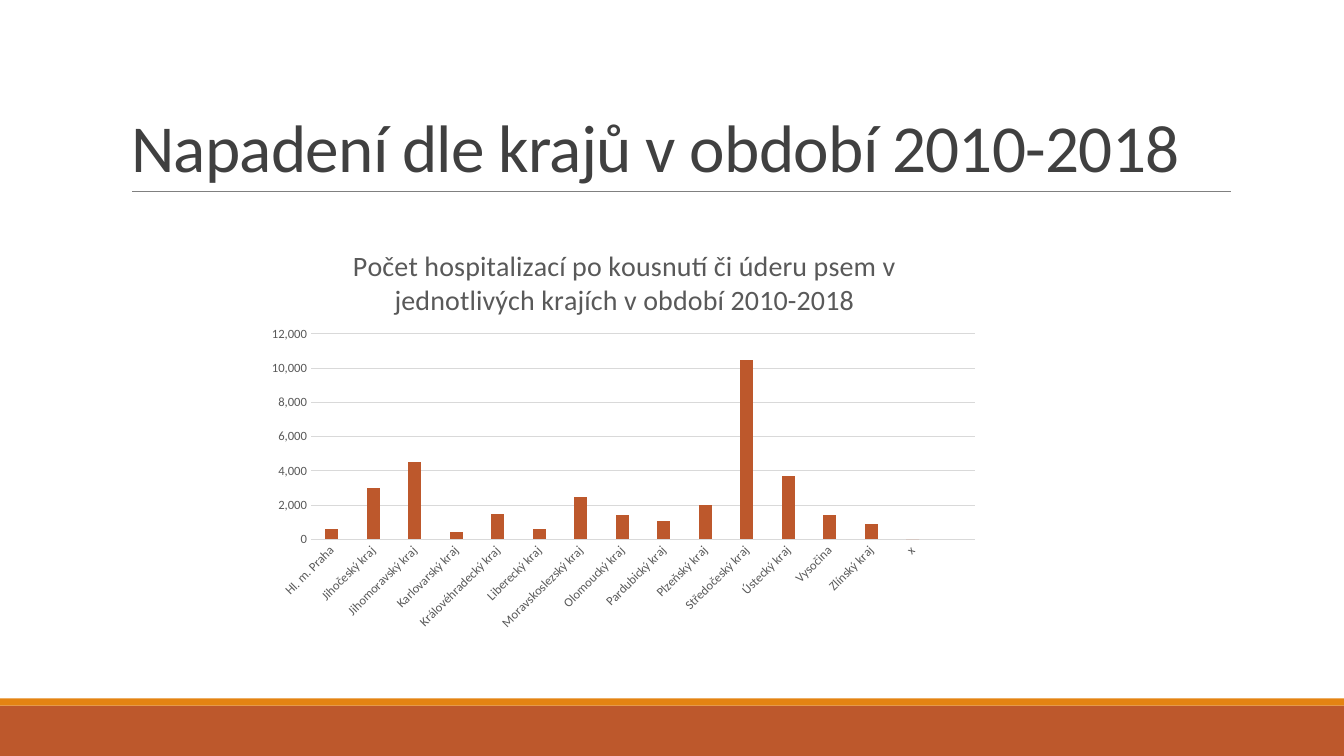
from lxml import etree
from pptx import Presentation
from pptx.chart.data import CategoryChartData
from pptx.dml.color import RGBColor
from pptx.enum.chart import XL_CHART_TYPE, XL_TICK_MARK
from pptx.enum.shapes import MSO_CONNECTOR, MSO_SHAPE
from pptx.enum.text import MSO_ANCHOR, MSO_AUTO_SIZE, PP_ALIGN
from pptx.oxml import parse_xml
from pptx.oxml.ns import nsdecls, qn
from pptx.util import Cm, Pt

COLUMNS = XL_CHART_TYPE.COLUMN_CLUSTERED
NO_TICK = XL_TICK_MARK.NONE
STRAIGHT = MSO_CONNECTOR.STRAIGHT
RECTANGLE = MSO_SHAPE.RECTANGLE
BOTTOM = MSO_ANCHOR.BOTTOM
NO_AUTOFIT = MSO_AUTO_SIZE.NONE
LEFT = PP_ALIGN.LEFT

FONT = "Calibri"
COLORS = {
    "rust": "BD582C",
    "orange": "E48312",
    "title": "404040",
    "rule": "808080",
    "label": "595959",
    "grid": "D9D9D9",
}
TITLE = "Napadení dle krajů v období 2010-2018"
CHART_TITLE = ("Počet hospitalizací po kousnutí či úderu psem v "
               "jednotlivých krajích v období 2010-2018")
HOSPITALIZATIONS = [
    ("Hl. m. Praha", 600),
    ("Jihočeský kraj", 3000),
    ("Jihomoravský kraj", 4500),
    ("Karlovarský kraj", 400),
    ("Královéhradecký kraj", 1500),
    ("Liberecký kraj", 600),
    ("Moravskoslezský kraj", 2500),
    ("Olomoucký kraj", 1400),
    ("Pardubický kraj", 1100),
    ("Plzeňský kraj", 2000),
    ("Středočeský kraj", 10500),
    ("Ústecký kraj", 3700),
    ("Vysočina", 1400),
    ("Zlínský kraj", 900),
    ("x", 0),
    ("", None),
]
SLIDE_WIDTH, SLIDE_HEIGHT = Cm(33.87), Cm(19.05)
# Footer bands from the bottom up: colour, height
FOOTER_BANDS = [("rust", Cm(1.27)), ("orange", Cm(0.18))]
# Plot area as fractions of the chart
PLOT_AREA = {"x": 0.07, "y": 0.26, "w": 0.91, "h": 0.5}


def color(name):
    return RGBColor.from_string(COLORS[name])


def style_font(font, size, color_name):
    font.name = FONT
    font.size = Pt(size)
    font.bold = False
    font.color.rgb = color(color_name)


def style_line(line, color_name, width):
    line.color.rgb = color(color_name)
    line.width = Pt(width)


def add_footer(slide):
    top = SLIDE_HEIGHT
    for color_name, height in FOOTER_BANDS:
        top -= height
        band = slide.shapes.add_shape(RECTANGLE, 0, top, SLIDE_WIDTH, height)
        band.shadow.inherit = False
        band.fill.solid()
        band.fill.fore_color.rgb = color(color_name)
        band.line.fill.background()


def add_title(slide):
    title = slide.shapes.title
    title.left, title.top = Cm(3.05), Cm(0.79)
    title.width, title.height = Cm(27.94), Cm(4.04)
    frame = title.text_frame
    frame.word_wrap = True
    frame.auto_size = NO_AUTOFIT
    frame.vertical_anchor = BOTTOM
    paragraph = frame.paragraphs[0]
    paragraph.alignment = LEFT
    paragraph.line_spacing = 0.85
    run = paragraph.add_run()
    run.text = TITLE
    style_font(run.font, 48, "title")
    run.font._element.set("spc", "-50")

    rule = slide.shapes.add_connector(
        STRAIGHT, Cm(3.33), Cm(4.83), Cm(31.01), Cm(4.83))
    style_line(rule.line, "rule", 0.5)
    etree.SubElement(rule._element.spPr, qn("a:effectLst"))


def set_plot_area(chart):
    plot_area = chart._chartSpace.chart.plotArea
    for layout in plot_area.findall(qn("c:layout")):
        plot_area.remove(layout)
    settings = [("layoutTarget", "inner"), ("xMode", "edge"), ("yMode", "edge")]
    settings += PLOT_AREA.items()
    items = "".join(f'<c:{tag} val="{value}"/>' for tag, value in settings)
    plot_area.insert(0, parse_xml(
        f'<c:layout {nsdecls("c")}><c:manualLayout>{items}'
        '</c:manualLayout></c:layout>'))


def add_chart(slide):
    data = CategoryChartData(number_format="#,##0")
    data.categories = [region for region, count in HOSPITALIZATIONS]
    data.add_series("Series 1", [count for region, count in HOSPITALIZATIONS])
    chart = slide.shapes.add_chart(
        COLUMNS, Cm(6.55), Cm(5.72), Cm(18.39), Cm(10.36), data).chart
    chart.has_legend = False
    style_font(chart.font, 10, "label")

    chart.has_title = True
    chart.chart_title.include_in_layout = False
    run = chart.chart_title.text_frame.paragraphs[0].add_run()
    run.text = CHART_TITLE
    style_font(run.font, 20, "label")

    plot = chart.plots[0]
    plot.gap_width = 219
    plot.overlap = -27
    plot.vary_by_categories = False
    columns = plot.series[0]
    columns.invert_if_negative = False
    columns.format.fill.solid()
    columns.format.fill.fore_color.rgb = color("rust")

    for axis in (chart.category_axis, chart.value_axis):
        axis.major_tick_mark = NO_TICK
        axis.minor_tick_mark = NO_TICK
        style_font(axis.tick_labels.font, 9, "label")
    category_axis, value_axis = chart.category_axis, chart.value_axis
    style_line(category_axis.format.line, "grid", 0.75)
    label_body = category_axis._element.find(qn("c:txPr")).find(qn("a:bodyPr"))
    label_body.set("rot", "-2700000")
    value_axis.format.line.fill.background()
    value_axis.minimum_scale = 0
    value_axis.maximum_scale = 12000
    value_axis.major_unit = 2000
    value_axis.has_major_gridlines = True
    style_line(value_axis.major_gridlines.format.line, "grid", 0.75)
    value_axis.tick_labels.number_format = "#,##0"
    value_axis.tick_labels.number_format_is_linked = False
    set_plot_area(chart)


def main():
    presentation = Presentation()
    presentation.slide_width = SLIDE_WIDTH
    presentation.slide_height = SLIDE_HEIGHT
    slide = presentation.slides.add_slide(presentation.slide_layouts[5])
    add_footer(slide)
    add_title(slide)
    add_chart(slide)
    presentation.save("out.pptx")


if __name__ == "__main__":
    main()
